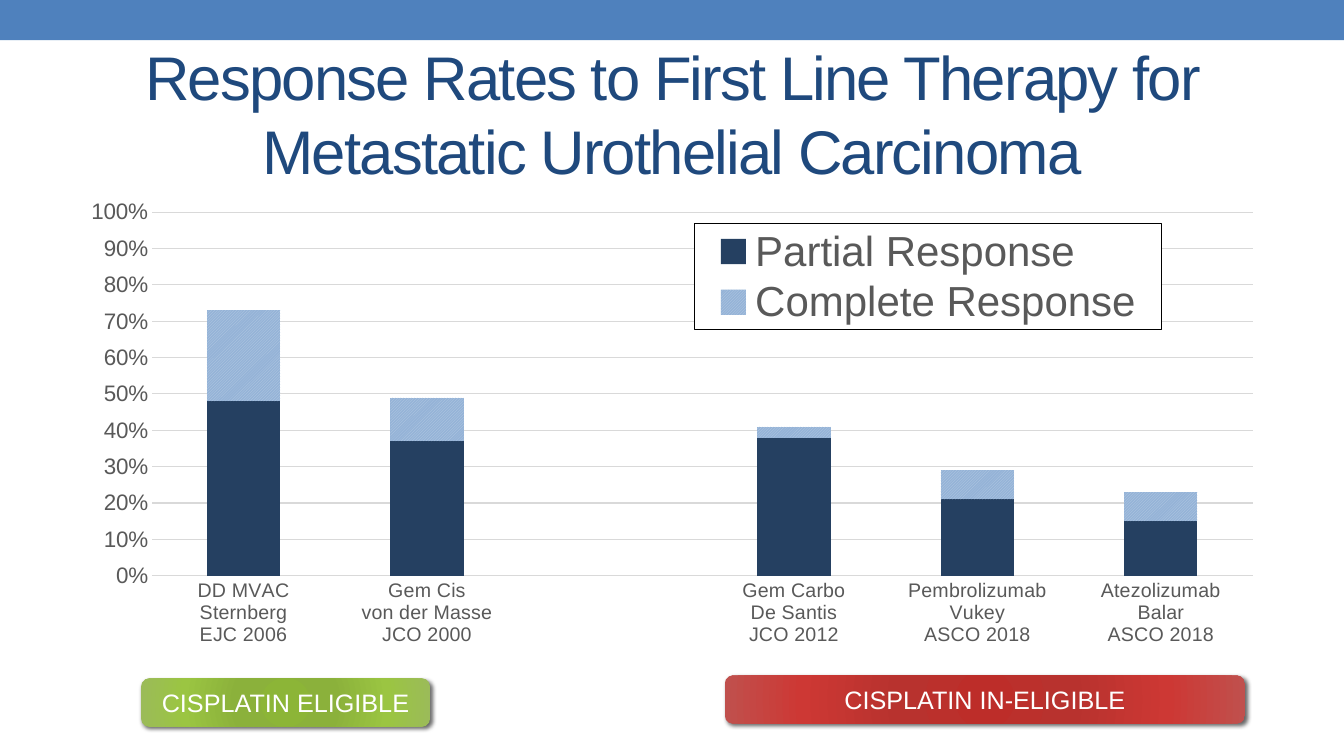
from dataclasses import dataclass

from lxml import etree
from pptx import Presentation
from pptx.chart.data import CategoryChartData
from pptx.dml.color import RGBColor
from pptx.enum.chart import XL_CHART_TYPE, XL_LEGEND_POSITION, XL_TICK_MARK
from pptx.enum.dml import MSO_PATTERN
from pptx.enum.shapes import MSO_SHAPE
from pptx.enum.text import MSO_ANCHOR, MSO_AUTO_SIZE, PP_ALIGN
from pptx.oxml import parse_xml
from pptx.oxml.ns import nsdecls, qn
from pptx.util import Inches, Pt

STACKED = XL_CHART_TYPE.COLUMN_STACKED
BOTTOM = XL_LEGEND_POSITION.BOTTOM
NO_TICK = XL_TICK_MARK.NONE
STRIPES = MSO_PATTERN.DARK_UPWARD_DIAGONAL
RECTANGLE = MSO_SHAPE.RECTANGLE
ROUNDED = MSO_SHAPE.ROUNDED_RECTANGLE
MIDDLE = MSO_ANCHOR.MIDDLE
CENTER = PP_ALIGN.CENTER
NO_AUTOFIT = MSO_AUTO_SIZE.NONE

SLIDE_WIDTH = Inches(13.33)
SLIDE_HEIGHT = Inches(7.5)
FONT = "Arial"
GREY = "595959"
GRID_GREY = "D9D9D9"
STOP_POSITIONS = (0, 34, 70, 100)


@dataclass(frozen=True)
class Box:
    """Left, top, width and height in percent of the surrounding area."""
    left: float
    top: float
    width: float
    height: float

    def on_slide(self) -> tuple[int, int, int, int]:
        return (int(SLIDE_WIDTH * self.left / 100), int(SLIDE_HEIGHT * self.top / 100),
                int(SLIDE_WIDTH * self.width / 100), int(SLIDE_HEIGHT * self.height / 100))


@dataclass(frozen=True)
class GroupLabel:
    text: str
    box: Box
    colors: tuple[str, ...]


@dataclass(frozen=True)
class Trial:
    label: str
    partial: float | None = None
    complete: float | None = None


HEADER_BOX = Box(0, 0, 100, 5.33)
TITLE_BOX = Box(5, 7.73, 90, 14.4)
CHART_BOX = Box(5, 25.07, 90, 71.07)
PLOT_BOX = Box(7, 4.2, 91, 67.7)
LEGEND_BOX = Box(51.9, 6.4, 38.6, 19.7)

GROUP_LABELS = (
    GroupLabel("CISPLATIN ELIGIBLE", Box(10.5, 89.73, 21.5, 6.4),
               ("8CB537", "8BB13B", "9BC542", "9BBB59")),
    GroupLabel("CISPLATIN IN-ELIGIBLE", Box(53.93, 89.33, 38.7, 6.4),
               ("BD2D29", "B8322E", "CD3834", "C0504D")),
)

TRIALS = (
    Trial("DD MVAC\nSternberg\nEJC 2006", 0.48, 0.25),
    Trial("Gem Cis\nvon der Masse\nJCO 2000", 0.37, 0.12),
    Trial(""),
    Trial("Gem Carbo\nDe Santis\nJCO 2012", 0.38, 0.03),
    Trial("Pembrolizumab\nVukey\nASCO 2018", 0.21, 0.08),
    Trial("Atezolizumab\nBalar\nASCO 2018", 0.15, 0.08),
)


def rgb(color: str) -> RGBColor:
    return RGBColor.from_string(color)


def format_font(font, size: float, color: str) -> None:
    font.name = FONT
    font.size = Pt(size)
    font.bold = False
    font.color.rgb = rgb(color)


def format_line(line, color: str) -> None:
    line.color.rgb = rgb(color)
    line.width = Pt(0.75)


def write_text(shape, text: str, *, size: float, color: str, spacing: float = 0) -> None:
    frame = shape.text_frame
    frame.word_wrap = True
    frame.auto_size = NO_AUTOFIT
    frame.vertical_anchor = MIDDLE
    paragraph = frame.paragraphs[0]
    paragraph.alignment = CENTER
    run = paragraph.add_run()
    run.text = text
    format_font(run.font, size, color)
    if spacing:
        run.font._element.set("spc", str(int(spacing * 100)))


def add_plain_shape(slide, kind, box: Box, color: str):
    shape = slide.shapes.add_shape(kind, *box.on_slide())
    shape.shadow.inherit = False
    shape.fill.solid()
    shape.fill.fore_color.rgb = rgb(color)
    shape.line.fill.background()
    return shape


def add_group_label(slide, label: GroupLabel) -> None:
    shape = add_plain_shape(slide, ROUNDED, label.box, label.colors[0])
    stops = "".join(f'<a:gs pos="{position * 1000}"><a:srgbClr val="{color}"/></a:gs>'
                    for position, color in zip(STOP_POSITIONS, label.colors))
    gradient = parse_xml(
        f'<a:gradFill {nsdecls("a")} rotWithShape="1"><a:gsLst>{stops}</a:gsLst>'
        '<a:path path="circle"><a:fillToRect l="100000" t="100000" r="100000" b="100000"/>'
        '</a:path></a:gradFill>')
    properties = shape._element.spPr
    properties.replace(properties.find(qn("a:solidFill")), gradient)
    shadow = etree.SubElement(properties.find(qn("a:effectLst")), qn("a:outerShdw"),
                              blurRad=str(Pt(3)), dist=str(Pt(2)), dir="2700000")
    shadow_color = etree.SubElement(shadow, qn("a:srgbClr"), val="000000")
    etree.SubElement(shadow_color, qn("a:alpha"), val="60000")
    write_text(shape, label.text, size=18, color="FFFFFF")


def manual_layout(box: Box, target: str = ""):
    inner = f'<c:layoutTarget val="{target}"/>' if target else ""
    return parse_xml(
        f'<c:layout {nsdecls("c")}><c:manualLayout>{inner}'
        '<c:xMode val="edge"/><c:yMode val="edge"/>'
        f'<c:x val="{box.left / 100}"/><c:y val="{box.top / 100}"/>'
        f'<c:w val="{box.width / 100}"/><c:h val="{box.height / 100}"/>'
        '</c:manualLayout></c:layout>')


def format_axes(chart) -> None:
    for axis, size in ((chart.category_axis, 14), (chart.value_axis, 16)):
        axis.major_tick_mark = NO_TICK
        axis.minor_tick_mark = NO_TICK
        format_font(axis.tick_labels.font, size, GREY)
    format_line(chart.category_axis.format.line, GRID_GREY)
    value_axis = chart.value_axis
    value_axis.format.line.fill.background()
    value_axis.minimum_scale = 0
    value_axis.maximum_scale = 1
    value_axis.major_unit = 0.1
    value_axis.tick_labels.number_format = "0%"
    value_axis.tick_labels.number_format_is_linked = False
    format_line(value_axis.major_gridlines.format.line, GRID_GREY)


def format_legend(chart) -> None:
    chart.has_legend = True
    legend = chart.legend
    legend.position = BOTTOM
    legend.include_in_layout = False
    format_font(legend.font, 30, GREY)
    element = legend._element
    for layout in element.findall(qn("c:layout")):
        element.remove(layout)
    element.find(qn("c:legendPos")).addnext(manual_layout(LEGEND_BOX))
    element.find(qn("c:txPr")).addprevious(parse_xml(
        f'<c:spPr {nsdecls("c", "a")}><a:solidFill><a:srgbClr val="FFFFFF"/></a:solidFill>'
        '<a:ln w="9525"><a:solidFill><a:srgbClr val="000000"/></a:solidFill></a:ln></c:spPr>'))


def add_response_chart(slide) -> None:
    data = CategoryChartData(number_format="0%")
    data.categories = [trial.label for trial in TRIALS]
    data.add_series("Partial Response", [trial.partial for trial in TRIALS])
    data.add_series("Complete Response", [trial.complete for trial in TRIALS])
    chart = slide.shapes.add_chart(STACKED, *CHART_BOX.on_slide(), data).chart
    chart.has_title = False
    format_font(chart.font, 10, "000000")
    plot = chart.plots[0]
    plot.gap_width = 150
    plot.overlap = 100
    plot.vary_by_categories = False
    partial, complete = (series.format.fill for series in plot.series)
    partial.solid()
    partial.fore_color.rgb = rgb("254061")
    complete.patterned()
    complete.pattern = STRIPES
    complete.fore_color.rgb = rgb("B9CDE5")
    complete.back_color.rgb = rgb("95B3D7")
    format_axes(chart)
    format_legend(chart)
    plot_area = chart._chartSpace.chart.plotArea
    for layout in plot_area.findall(qn("c:layout")):
        plot_area.remove(layout)
    plot_area.insert(0, manual_layout(PLOT_BOX, "inner"))


def main() -> None:
    presentation = Presentation()
    presentation.slide_width = SLIDE_WIDTH
    presentation.slide_height = SLIDE_HEIGHT
    slide = presentation.slides.add_slide(presentation.slide_layouts[5])
    add_plain_shape(slide, RECTANGLE, HEADER_BOX, "4F81BD")
    title = slide.shapes.title
    title.left, title.top, title.width, title.height = TITLE_BOX.on_slide()
    write_text(title, "Response Rates to First Line Therapy for Metastatic Urothelial Carcinoma",
               size=44, color="1F497D", spacing=-1.3)
    add_response_chart(slide)
    for label in GROUP_LABELS:
        add_group_label(slide, label)
    presentation.save("out.pptx")


if __name__ == "__main__":
    main()
